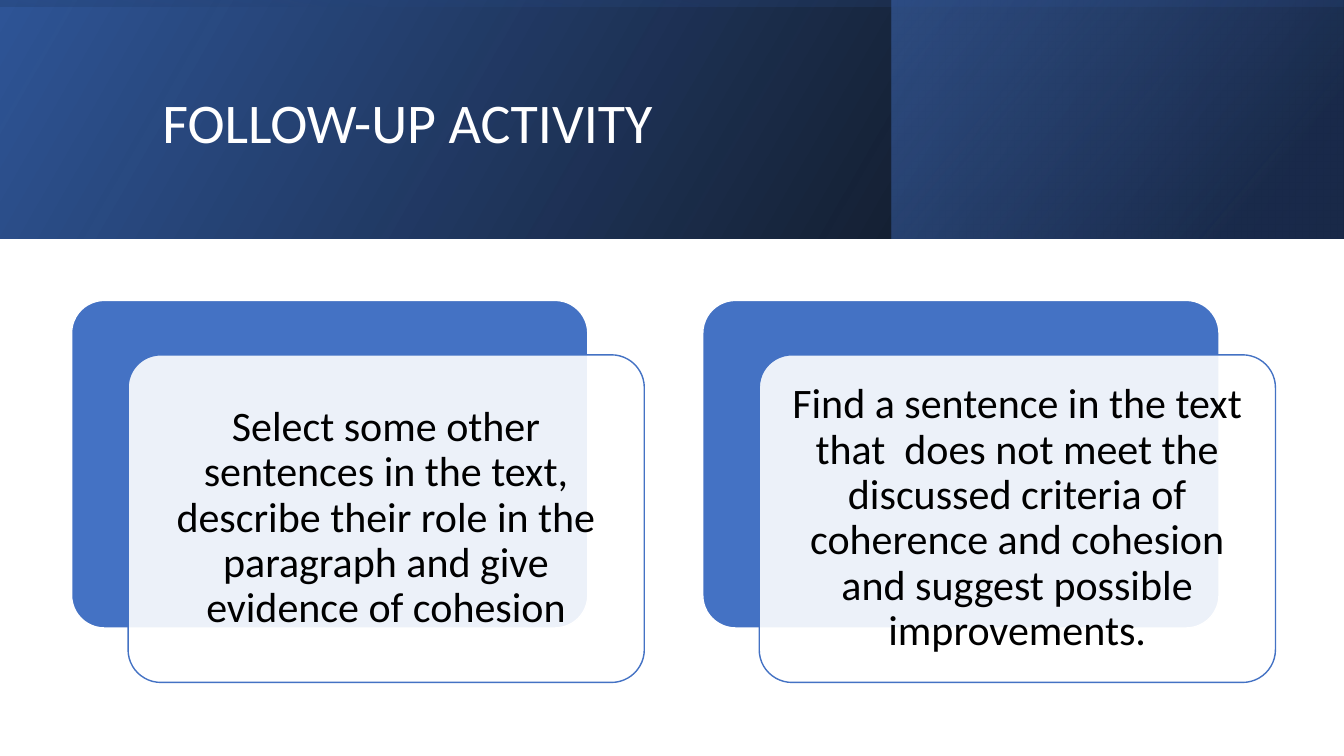
from pptx import Presentation
from pptx.dml.color import RGBColor
from pptx.enum.shapes import MSO_SHAPE
from pptx.enum.text import MSO_ANCHOR, MSO_AUTO_SIZE, PP_ALIGN
from pptx.oxml.ns import qn
from pptx.util import Inches, Pt
from lxml.etree import SubElement

COLORS = {"white": "FFFFFF", "black": "000000", "blue": "4472C4",
          "deep": "2F5597", "navy": "203864"}

# Box, rotation, gradient angle, then stops of (percent, colour, opacity)
BANDS = [
    ((0, 0, 13.33, 2.37), 0, 330, [(0, "black", 96), (100, "deep", 100)]),
    ((8.84, 0, 4.48, 2.37), 0, 320, [(19, "navy", 68), (100, "blue", 48)]),
    ((5.48, -5.48, 2.37, 13.33), 270, 350,
     [(23, "deep", 16), (99, "black", 45)]),
]
TASKS = [
    "Select some other sentences in the text, describe their role in the "
    "paragraph and give evidence of cohesion",
    "Find a sentence in the text that  does not meet the discussed criteria "
    "of coherence and cohesion and suggest possible improvements.",
]
LEFT, TOP, WIDTH, HEIGHT = 0.71, 2.98, 5.12, 3.25
PITCH, SHIFT_X, SHIFT_Y = 6.26, 0.56, 0.54


def rgb(name):
    return RGBColor.from_string(COLORS[name])


def fade(color, alpha):
    """Give a colour element an opacity in percent."""
    SubElement(color, qn("a:alpha")).set("val", str(alpha * 1000))


class Deck:
    def __init__(self, font):
        self.font = font
        self.prs = Presentation()
        self.prs.slide_width = Inches(13.33)
        self.prs.slide_height = Inches(7.5)
        self.slide = self.prs.slides.add_slide(self.prs.slide_layouts[5])

    def label(self, shape, text, size, color, align, inset):
        frame = shape.text_frame
        frame.text = text
        para = frame.paragraphs[0]
        margins = {f"margin_{side}": Inches(inset)
                   for side in ("left", "right", "top", "bottom")}
        formats = [
            (frame, {"word_wrap": True, "auto_size": MSO_AUTO_SIZE.NONE,
                     "vertical_anchor": MSO_ANCHOR.MIDDLE, **margins}),
            (para, {"alignment": align, "line_spacing": 0.9}),
            (para.runs[0].font, {"name": self.font, "size": Pt(size)}),
        ]
        for target, values in formats:
            for key, value in values.items():
                setattr(target, key, value)
        para.runs[0].font.color.rgb = rgb(color)

    def shape(self, kind, box):
        shape = self.slide.shapes.add_shape(kind, *map(Inches, box))
        shape.shadow.inherit = False
        return shape

    def band(self, box, turn, angle, stops):
        """Draw a mirrored rectangle with a translucent gradient."""
        band = self.shape(MSO_SHAPE.RECTANGLE, box)
        band.rotation = turn
        band.element.spPr.find(qn("a:xfrm")).set("flipH", "1")
        band.line.fill.background()
        band.fill.gradient()
        band.fill.gradient_angle = 360 - angle
        for stop, (place, color, alpha) in zip(band.fill.gradient_stops, stops):
            stop.position = place / 100
            stop.color.rgb = rgb(color)
        colors = list(band.element.spPr.iter(qn("a:srgbClr")))
        for color, stop in zip(colors, stops):
            fade(color, stop[2])

    def panel(self, left, top, fill, line, alpha=100):
        panel = self.shape(MSO_SHAPE.ROUNDED_RECTANGLE,
                           (left, top, WIDTH, HEIGHT))
        panel.adjustments[0] = 0.1
        panel.fill.solid()
        panel.fill.fore_color.rgb = rgb(fill)
        fade(next(panel.element.spPr.iter(qn("a:srgbClr"))), alpha)
        panel.line.color.rgb = rgb(line)
        panel.line.width = Pt(1)
        return panel

    def card(self, left, text):
        self.panel(left, TOP, "blue", "white")
        front = self.panel(left + SHIFT_X, TOP + SHIFT_Y, "white", "blue", 90)
        self.label(front, text, 30, "black", PP_ALIGN.CENTER, 0.12)

    def title(self, text, box):
        title = self.slide.shapes.title
        for key, value in zip(("left", "top", "width", "height"), box):
            setattr(title, key, Inches(value))
        self.label(title, text, 40, "white", PP_ALIGN.LEFT, 0.1)
        # Bring the title in front of the bands
        title.element.getparent().append(title.element)


def main():
    deck = Deck("Calibri")
    for band in BANDS:
        deck.band(*band)
    deck.title("FOLLOW-UP ACTIVITY", (1.51, 0.38, 10.63, 1.72))
    for i, task in enumerate(TASKS):
        deck.card(LEFT + i * PITCH, task)
    deck.prs.save("out.pptx")


if __name__ == "__main__":
    main()
